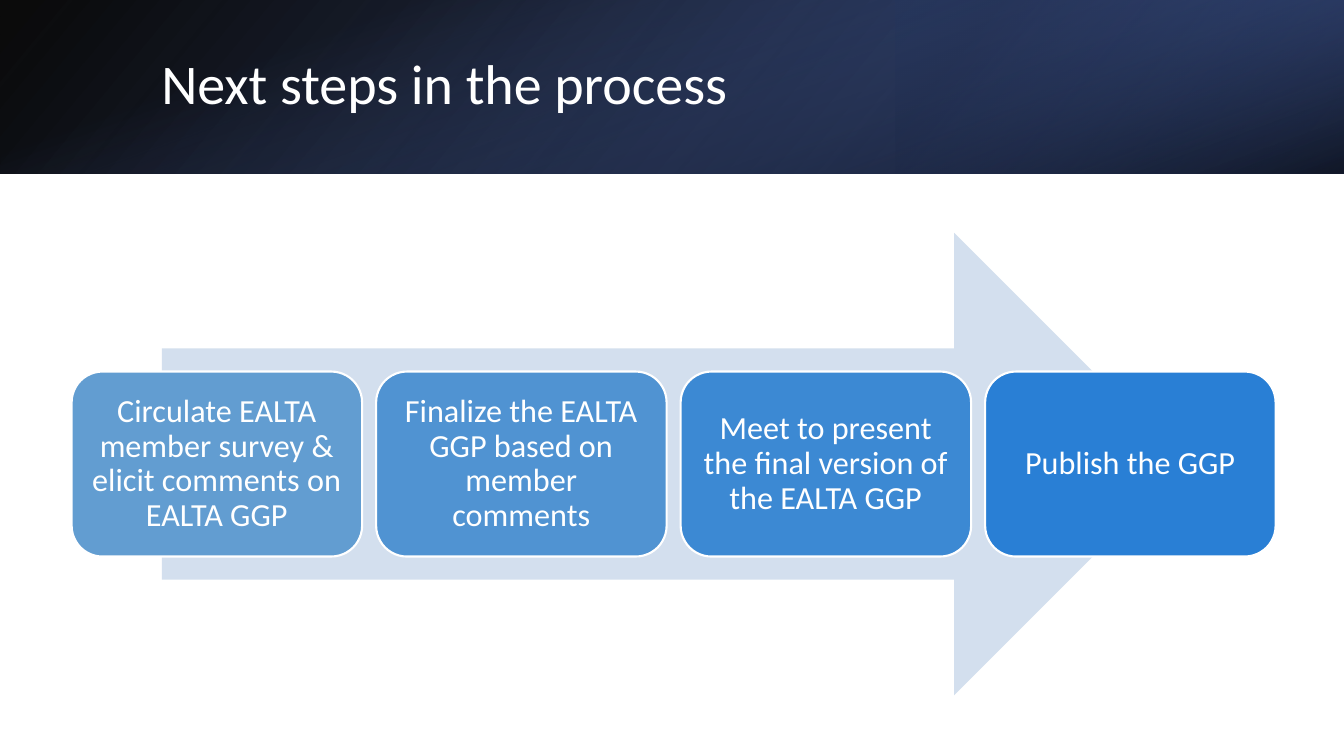
from dataclasses import dataclass

from lxml import etree
from pptx import Presentation
from pptx.dml.color import RGBColor
from pptx.enum.shapes import MSO_SHAPE
from pptx.enum.text import MSO_ANCHOR, PP_ALIGN
from pptx.oxml.ns import qn
from pptx.util import Pt

RECT, ROUND, ARROW = MSO_SHAPE.RECTANGLE, MSO_SHAPE.ROUNDED_RECTANGLE, MSO_SHAPE.RIGHT_ARROW
MIDDLE = MSO_ANCHOR.MIDDLE
LEFT, CENTER = PP_ALIGN.LEFT, PP_ALIGN.CENTER


@dataclass(frozen=True)
class Theme:
    """Colours, font and type sizes of the slide."""
    font: str = "Calibri"
    title_size: int = 40
    step_size: int = 23
    white: str = "FFFFFF"
    black: str = "000000"
    blue: str = "4A66AC"
    mid_blue: str = "384C81"
    dark_blue: str = "253356"
    arrow: str = "D3DFEE"
    steps: tuple = ("629DD1", "5093D2", "3C89D3", "297FD5")


T = Theme()
TITLE = "Next steps in the process"
STEPS = (
    "Circulate EALTA member survey & elicit comments on EALTA GGP",
    "Finalize the EALTA GGP based on member comments",
    "Meet to present the final version of the EALTA GGP",
    "Publish the GGP",
)


def rgb(code):
    """Turn a hex code into a colour."""
    return RGBColor.from_string(code)


def add_box(s, kind, x, y, w, h):
    """Add a preset shape without shadow or outline."""
    sp = s.shapes.add_shape(kind, Pt(x), Pt(y), Pt(w), Pt(h))
    sp.shadow.inherit = False
    sp.line.fill.background()
    return sp


def write_text(sp, text, size, align):
    """Set one white, vertically centred paragraph in a shape."""
    tf = sp.text_frame
    tf.word_wrap = True
    tf.vertical_anchor = MIDDLE
    p = tf.paragraphs[0]
    p.alignment = align
    p.line_spacing = 0.9
    r = p.add_run()
    r.text = text
    r.font.name, r.font.size = T.font, Pt(size)
    r.font.color.rgb = rgb(T.white)


def fill_gradient(sp, angle, stops):
    """Fill a shape with a linear gradient of (position, colour, opacity) stops."""
    sp.fill.gradient()
    sp.fill.gradient_angle = 360 - angle
    for stop, (position, color, opacity) in zip(sp.fill.gradient_stops, stops):
        stop.position = position / 100
        stop.color.rgb = rgb(color)
    for clr, (_, _, opacity) in zip(sp._element.spPr.iter(qn("a:srgbClr")), stops):
        etree.SubElement(clr, qn("a:alpha")).set("val", str(opacity * 1000))


def add_header(s, x, y, w, h):
    """Layer the gradients of the header band and set the title on top."""
    base = add_box(s, RECT, x, y, w, h)
    fill_gradient(base, 140, ((0, T.black, 96), (100, T.mid_blue, 100)))
    glow = add_box(s, RECT, x + w * 2 / 3, y, w / 3, h)
    glow.rotation = 180
    fill_gradient(glow, 320, ((19, T.dark_blue, 68), (100, T.blue, 79)))
    for sp in (base, glow):
        sp._element.spPr.find(qn("a:xfrm")).set("flipH", "1")
    shade = add_box(s, RECT, x + (w - h) / 2, y + (h - w) / 2, h, w)
    shade.rotation = 90
    fill_gradient(shade, 340, ((23, T.blue, 0), (99, T.black, 74)))

    title = s.shapes.title
    s.shapes._spTree.append(title._element)
    title.left, title.top = Pt(x + 108), Pt(y + 27.4)
    title.width, title.height = Pt(790.5), Pt(69)
    write_text(title, TITLE, T.title_size, LEFT)


def add_process(s, x, y, w, h):
    """Draw the arrow and the row of equal steps across it."""
    arrow_w = w * 0.85
    arrow = add_box(s, ARROW, x + (w - arrow_w) / 2, y, arrow_w, h)
    arrow.fill.solid()
    arrow.fill.fore_color.rgb = rgb(T.arrow)

    gap, step_h = 10, h * 0.4
    step_w = (w - gap * (len(STEPS) - 1)) / len(STEPS)
    for i, (text, color) in enumerate(zip(STEPS, T.steps)):
        sp = add_box(s, ROUND, x + i * (step_w + gap), y + (h - step_h) / 2, step_w, step_h)
        sp.fill.solid()
        sp.fill.fore_color.rgb = rgb(color)
        sp.line.color.rgb = rgb(T.white)
        sp.line.width = Pt(1.5)
        tf = sp.text_frame
        tf.margin_left = tf.margin_right = tf.margin_top = tf.margin_bottom = Pt(7)
        write_text(sp, text, T.step_size, CENTER)


def main():
    """Build the slide and save it."""
    prs = Presentation()
    prs.slide_width, prs.slide_height = Pt(960), Pt(540)
    s = prs.slides.add_slide(prs.slide_layouts[5])
    add_header(s, 0, 0, 960, 124)
    add_process(s, 51.2, 166.3, 860, 330.4)
    prs.save("out.pptx")


if __name__ == "__main__":
    main()
